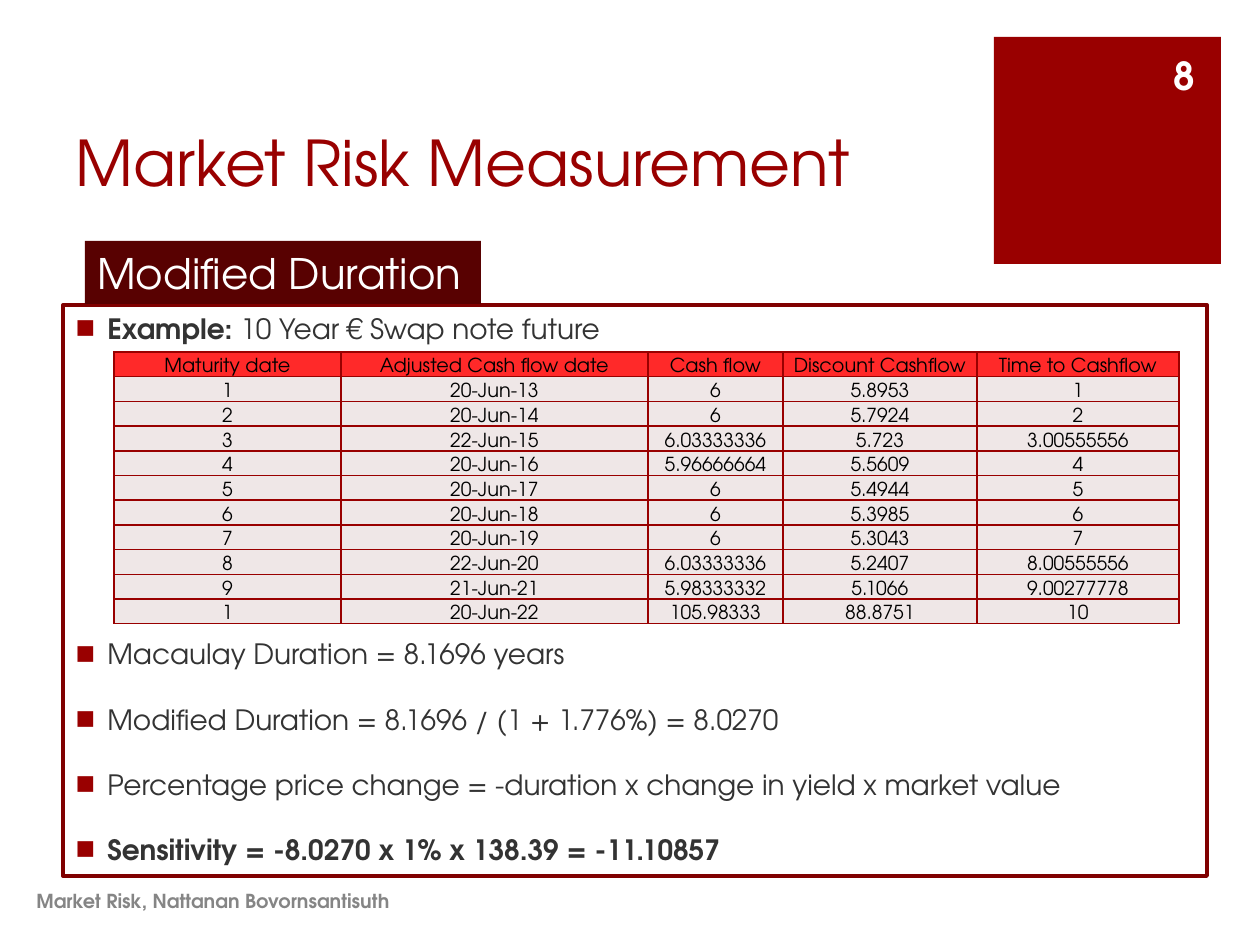
from dataclasses import dataclass
from typing import NamedTuple

from lxml.etree import SubElement
from pptx import Presentation
from pptx.dml.color import RGBColor
from pptx.enum.shapes import MSO_SHAPE as Preset
from pptx.enum.text import MSO_ANCHOR as Anchor, PP_ALIGN as Align
from pptx.oxml.ns import qn
from pptx.util import Emu, Pt

PX_PER_INCH = 126


def px(length: int) -> Emu:
    return Emu(round(length * 914400 / PX_PER_INCH))


@dataclass(frozen=True)
class Theme:
    font: str = "TeX Gyre Adventor"
    accent: str = "990000"
    frame: str = "800000"
    tab: str = "580101"
    header: str = "FF2929"
    row: str = "EFE7E7"
    body: str = "333333"
    muted: str = "858585"
    white: str = "FFFFFF"
    black: str = "000000"
    title_size: int = 36
    tab_size: int = 24
    number_size: int = 22
    body_size: int = 16
    small_size: int = 11


THEME = Theme()


class Box(NamedTuple):
    left: int
    top: int
    width: int
    height: int

    def emu(self) -> list[Emu]:
        return [px(length) for length in self]


class Bullet(NamedTuple):
    lead: str  # bold part
    rest: str
    before: int  # points


class CashFlow(NamedTuple):
    maturity: str
    adjusted_date: str
    amount: str
    discounted: str
    time: str


LINE_GAP = 18
TABLE_GAP = 167  # leaves room for the table between two bullets
BULLETS = [
    Bullet("Example: ", "10 Year € Swap note future", 0),
    Bullet("", "Macaulay Duration = 8.1696 years", TABLE_GAP),
    Bullet("", "Modified Duration = 8.1696 / (1 + 1.776%) = 8.0270", LINE_GAP),
    Bullet("", "Percentage price change = -duration x change in yield x market value", LINE_GAP),
    Bullet("Sensitivity = -8.0270 x 1% x 138.39 = -11.10857", "", LINE_GAP),
]

COLUMN_WIDTHS = [227, 307, 135, 194, 202]
CASH_FLOWS = [
    CashFlow("Maturity date", "Adjusted Cash flow date", "Cash flow",
             "Discount Cashflow", "Time to Cashflow"),
    CashFlow("1", "20-Jun-13", "6", "5.8953", "1"),
    CashFlow("2", "20-Jun-14", "6", "5.7924", "2"),
    CashFlow("3", "22-Jun-15", "6.03333336", "5.723", "3.00555556"),
    CashFlow("4", "20-Jun-16", "5.96666664", "5.5609", "4"),
    CashFlow("5", "20-Jun-17", "6", "5.4944", "5"),
    CashFlow("6", "20-Jun-18", "6", "5.3985", "6"),
    CashFlow("7", "20-Jun-19", "6", "5.3043", "7"),
    CashFlow("8", "22-Jun-20", "6.03333336", "5.2407", "8.00555556"),
    CashFlow("9", "21-Jun-21", "5.98333332", "5.1066", "9.00277778"),
    CashFlow("1", "20-Jun-22", "105.98333", "88.8751", "10"),
]


def rgb(color: str) -> RGBColor:
    return RGBColor.from_string(color)


def style_run(run, size: int, color: str, bold: bool = False) -> None:
    run.font.name = THEME.font
    run.font.size = Pt(size)
    run.font.bold = bold
    run.font.color.rgb = rgb(color)


def write_line(frame, text: str, size: int, color: str, bold: bool = False,
               align=Align.LEFT, anchor=Anchor.MIDDLE, wrap: bool = True) -> None:
    frame.text = text
    frame.word_wrap = wrap
    frame.vertical_anchor = anchor
    frame.paragraphs[0].alignment = align
    style_run(frame.paragraphs[0].runs[0], size, color, bold)


def add_rectangle(slide, box: Box, fill: str | None = None, line: str | None = None):
    rectangle = slide.shapes.add_shape(Preset.RECTANGLE, *box.emu())
    rectangle.shadow.inherit = False
    if fill:
        rectangle.fill.solid()
        rectangle.fill.fore_color.rgb = rgb(fill)
    else:
        rectangle.fill.background()
    if line:
        rectangle.line.color.rgb = rgb(line)
        rectangle.line.width = Pt(2.25)
    else:
        rectangle.line.fill.background()
    return rectangle


def add_label(slide, box: Box, text: str, size: int, color: str, align=Align.LEFT) -> None:
    label = slide.shapes.add_textbox(*box.emu())
    write_line(label.text_frame, text, size, color, bold=True, align=align)


def mark_bullet(paragraph) -> None:
    properties = paragraph._p.get_or_add_pPr()
    properties.set("marL", str(px(32)))
    properties.set("indent", str(-px(32)))
    color = SubElement(properties, qn("a:buClr"))
    SubElement(color, qn("a:srgbClr"), val=THEME.accent)
    SubElement(properties, qn("a:buFont"), typeface=THEME.font)
    SubElement(properties, qn("a:buChar"), char="■")


def write_bullets(frame, bullets: list[Bullet]) -> None:
    frame.word_wrap = True
    frame.vertical_anchor = Anchor.TOP
    for index, bullet in enumerate(bullets):
        paragraph = frame.add_paragraph() if index else frame.paragraphs[0]
        paragraph.alignment = Align.LEFT
        paragraph.space_before = Pt(bullet.before)
        mark_bullet(paragraph)
        for text, bold in ((bullet.lead, True), (bullet.rest, False)):
            if text:
                run = paragraph.add_run()
                run.text = text
                style_run(run, THEME.body_size, THEME.body, bold)


def outline_cell(cell) -> None:
    properties = cell._tc.get_or_add_tcPr()
    for edge in ("a:lnL", "a:lnR", "a:lnT", "a:lnB"):
        line = SubElement(properties, qn(edge), w=str(Pt(1)))
        fill = SubElement(line, qn("a:solidFill"))
        SubElement(fill, qn("a:srgbClr"), val=THEME.accent)


def add_cash_flow_table(slide, box: Box, rows: list[CashFlow]) -> None:
    table = slide.shapes.add_table(len(rows), len(COLUMN_WIDTHS), *box.emu()).table
    table.first_row = table.horz_banding = False
    for column, width in zip(table.columns, COLUMN_WIDTHS):
        column.width = px(width)
    for row_index, row in enumerate(rows):
        for column_index, text in enumerate(row):
            cell = table.cell(row_index, column_index)
            cell.margin_left = cell.margin_right = cell.margin_top = px(1)
            cell.margin_bottom = 0
            cell.vertical_anchor = Anchor.BOTTOM
            outline_cell(cell)
            cell.fill.solid()
            cell.fill.fore_color.rgb = rgb(THEME.row if row_index else THEME.header)
            paragraph = cell.text_frame.paragraphs[0]
            paragraph.text = text
            paragraph.alignment = Align.CENTER
            style_run(paragraph.runs[0], THEME.small_size, THEME.black)


def main() -> None:
    deck = Presentation()
    deck.slide_width, deck.slide_height = px(1260), px(945)
    slide = deck.slides.add_slide(deck.slide_layouts[5])

    # Corner block and title
    add_rectangle(slide, Box(994, 37, 227, 227), fill=THEME.accent)
    title = slide.shapes.title
    title.left, title.top, title.width, title.height = Box(63, 48, 897, 157).emu()
    write_line(title.text_frame, "Market Risk Measurement", THEME.title_size,
               THEME.accent, anchor=Anchor.BOTTOM)

    # Framed bullets
    example = add_rectangle(slide, Box(63, 305, 1144, 571), line=THEME.frame)
    write_bullets(example.text_frame, BULLETS)

    # Footer and slide number
    add_label(slide, Box(24, 876, 828, 50), "Market Risk, Nattanan Bovornsantisuth",
              THEME.small_size, THEME.muted)
    add_label(slide, Box(1138, 50, 69, 50), "8", THEME.number_size, THEME.white, Align.RIGHT)

    # Section tab
    section = add_rectangle(slide, Box(85, 241, 396, 63), fill=THEME.tab)
    write_line(section.text_frame, "Modified Duration", THEME.tab_size, THEME.white, wrap=False)

    # Cash flow table
    add_cash_flow_table(slide, Box(114, 352, sum(COLUMN_WIDTHS), 272), CASH_FLOWS)

    deck.save("out.pptx")


if __name__ == "__main__":
    main()
